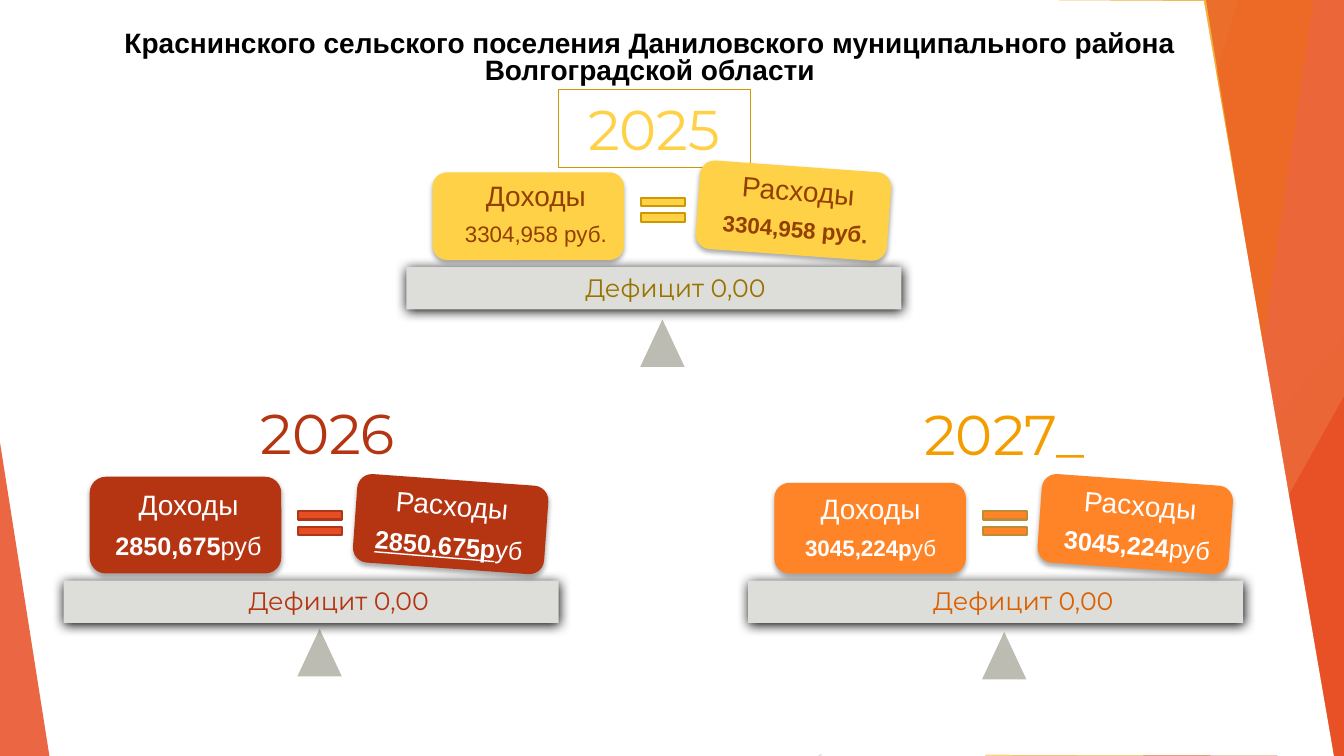
"""Builds the slide that balances budget income and expenses for 2025-2027."""
from lxml.etree import SubElement
from pptx import Presentation
from pptx.dml.color import RGBColor
from pptx.enum.shapes import MSO_CONNECTOR, MSO_SHAPE as SHAPE
from pptx.enum.text import MSO_AUTO_SIZE as AUTO_SIZE, PP_ALIGN as ALIGN
from pptx.oxml.ns import qn
from pptx.util import Inches, Pt

WHITE = RGBColor(0xFF, 0xFF, 0xFF)
BLACK = RGBColor(0x00, 0x00, 0x00)
RED = RGBColor(0xE8, 0x4C, 0x22)
SALMON = RGBColor(0xF1, 0x94, 0x7A)
AMBER = RGBColor(0xF4, 0x9D, 0x00)
APRICOT = RGBColor(0xFF, 0xBD, 0x47)
ORANGE = RGBColor(0xFF, 0x84, 0x27)
DARK_ORANGE = RGBColor(0xDC, 0x5F, 0x00)
TAN = RGBColor(0xBD, 0x8C, 0x35)
BRICK = RGBColor(0xB5, 0x35, 0x13)
RUST = RGBColor(0xAC, 0x38, 0x19)
YELLOW = RGBColor(0xFF, 0xD1, 0x47)
GOLD = RGBColor(0xCC, 0x99, 0x00)
OLIVE = RGBColor(0x99, 0x73, 0x00)
BROWN = RGBColor(0x93, 0x3F, 0x00)
BEAM_GREY = RGBColor(0xDD, 0xDD, 0xD9)
PIVOT_GREY = RGBColor(0xBC, 0xBC, 0xB2)
LINE_GREY = RGBColor(0xBF, 0xBF, 0xBF)
PALE_GREY = RGBColor(0xD9, 0xD9, 0xD9)

BEAM_SHADOW = (100, 8.5, 1)
CARD_SHADOW = (32, 3.5, 2.2)


def paint(shape, fill, alpha=100, line=None, line_width=1.5, shadow=None):
    """Set fill, outline and downward shadow (opacity, blur, distance)."""
    shape.shadow.inherit = False
    shape.fill.solid()
    shape.fill.fore_color.rgb = fill
    if alpha < 100:
        color = shape.fill._xPr.find(qn("a:solidFill"))[0]
        SubElement(color, qn("a:alpha"), val=str(alpha * 1000))
    if line is None:
        shape.line.fill.background()
    else:
        shape.line.color.rgb = line
        shape.line.width = Pt(line_width)
    if shadow:
        opacity, blur, distance = shadow
        effects = shape._element.spPr.find(qn("a:effectLst"))
        outer = SubElement(effects, qn("a:outerShdw"), blurRad=str(Pt(blur)),
                           dist=str(Pt(distance)), dir="5400000", algn="t", rotWithShape="0")
        black = SubElement(outer, qn("a:srgbClr"), val="000000")
        SubElement(black, qn("a:alpha"), val=str(opacity * 1000))


def write(place, lines, color, font="Arial", space_after=0):
    """Add a centred text box; each line is a list of (text, size, bold, underline)."""
    box = slide.shapes.add_textbox(*map(Inches, place))
    frame = box.text_frame
    frame.word_wrap = True
    frame.auto_size = AUTO_SIZE.SHAPE_TO_FIT_TEXT
    for number, runs in enumerate(lines):
        paragraph = frame.add_paragraph() if number else frame.paragraphs[0]
        paragraph.alignment = ALIGN.CENTER
        paragraph.space_after = Pt(space_after)
        for text, size, bold, underline in runs:
            run = paragraph.add_run()
            run.text = text
            run.font.name = font
            run.font.size = Pt(size)
            run.font.bold = bold
            run.font.underline = underline
            run.font.color.rgb = color
    return box


prs = Presentation()
prs.slide_width, prs.slide_height = Inches(13.33), Inches(7.5)
slide = prs.slides.add_slide(prs.slide_layouts[6])
shapes = slide.shapes

for ends, color in [((10.25, 0, 11.58, 7.5), LINE_GREY), ((13.33, 4.03, 8.12, 7.5), PALE_GREY)]:
    ray = shapes.add_connector(MSO_CONNECTOR.STRAIGHT, *map(Inches, ends))
    ray.line.color.rgb = color
    ray.line.width = Pt(0.75)
    SubElement(ray._element.spPr, qn("a:effectLst"))

TOP, BOTTOM, RIGHT = -0.01, 7.5, 13.33
facets = [
    ("band", (12.28, 10.04), RED, 30),
    ("band", (10.5, 11.83), RED, 20),
    ("corner", (9.77, 3.33, 3.56, 4.17, 1), APRICOT, 72),
    ("band", (10.21, 12.91), AMBER, 70),
    ("band", (13.03, 11.92), SALMON, 70),
    ("band", (11.96, 13.18), RED, 65),
    ("corner", (11.34, 3.93, 1.99, 3.57, 1), RED, 80),
    ("corner", (0, 4.39, 0.49, 3.11, 0), RED, 85),
    ("outline", [(11.94, 0.01), (13.23, 7.5), (7.86, 7.48), (10.43, 5.6), (10.7, 4.09), (9.91, 0)],
     WHITE, 100),
]
for kind, geometry, color, alpha in facets:
    if kind == "corner":
        *place, apex = geometry
        facet = shapes.add_shape(SHAPE.ISOSCELES_TRIANGLE, *map(Inches, place))
        facet.adjustments[0] = apex
    else:
        points = geometry
        if kind == "band":
            upper, lower = geometry
            points = [(upper, TOP), (RIGHT, TOP), (RIGHT, BOTTOM), (lower, BOTTOM)]
        start, *rest = [(Inches(x), Inches(y)) for x, y in points]
        builder = shapes.build_freeform(*start)
        builder.add_line_segments(rest, close=True)
        facet = builder.convert_to_shape()
    paint(facet, color, alpha)

balances = [
    dict(beam=(7.42, 5.76), year="2027_", year_at=(9.01, 3.91), year_color=AMBER,
         pivot_gap=0.51, deficit_shift=0.96, deficit_color=DARK_ORANGE,
         card=ORANGE, card_height=0.9, card_text=WHITE, equal=ORANGE, equal_line=TAN,
         income_at=(7.65, 4.83, 1.97, 0.79),
         income=[("3045,224р", 16, True, False), ("уб", 16, False, False)],
         expense_at=(10.29, 4.79, 2.01, 0.82),
         expense=[("3045,224", 18, True, False), ("руб", 18, False, False)]),
    dict(beam=(0.63, 5.76), year="2026", year_at=(2.3, 3.9), year_color=BRICK,
         pivot_gap=0.48, deficit_shift=0.96, deficit_color=BRICK,
         card=BRICK, card_height=0.96, card_text=WHITE, equal=RED, equal_line=RUST,
         income_at=(0.84, 4.79, 2.06, 0.82),
         income=[("2850,675", 18, True, False), ("руб", 18, False, False)],
         expense_at=(3.42, 4.79, 2.1, 0.82),
         expense=[("2850,675р", 18, True, True), ("уб", 18, False, False)]),
    dict(beam=(4.03, 2.65), year="2025", year_at=(5.54, 0.89), year_color=YELLOW,
         pivot_gap=0.52, deficit_shift=0.9, deficit_color=OLIVE,
         card=YELLOW, card_height=0.87, card_text=BROWN, equal=YELLOW, equal_line=GOLD,
         income_at=(4.31, 1.72, 2.01, 0.79), income=[("3304,958 руб.", 16, False, False)],
         expense_at=(6.9, 1.67, 2.01, 0.79), expense=[("3304,958 руб.", 16, True, False)]),
]
for balance in balances:
    x, y = balance["beam"]
    card, height = balance["card"], balance["card_height"]

    year = write((*balance["year_at"], 1.9, 0.77), [[(balance["year"], 40, False, False)]],
                 balance["year_color"], "Montserrat")
    if balance["year"] == "2025":
        year.line.color.rgb = GOLD
        year.line.width = Pt(0.75)

    pivot = shapes.add_shape(SHAPE.ISOSCELES_TRIANGLE, Inches(x + 2.32),
                             Inches(y + balance["pivot_gap"]), Inches(0.44), Inches(0.47))
    paint(pivot, PIVOT_GREY)
    beam = shapes.add_shape(SHAPE.RECTANGLE, Inches(x), Inches(y), Inches(4.91), Inches(0.42))
    paint(beam, BEAM_GREY, shadow=BEAM_SHADOW)
    write((x + balance["deficit_shift"], y, 3.54, 0.4), [[("Дефицит 0,00", 18, False, False)]],
          balance["deficit_color"], "Montserrat")

    for left, top, card_height, tilt in [(x + 0.26, y - 0.07 - height, height, 0),
                                         (x + 2.89, y - 1, 0.88, 4.1)]:
        plate = shapes.add_shape(SHAPE.FLOWCHART_ALTERNATE_PROCESS, Inches(left), Inches(top),
                                 Inches(1.9), Inches(card_height))
        plate.rotation = tilt
        paint(plate, card, shadow=CARD_SHADOW)
    for part, label, tilt in [("income", "Доходы", 0), ("expense", "Расходы", 4.7)]:
        amount = write(balance[part + "_at"], [[(label, 20, False, False)], balance[part]],
                       balance["card_text"], space_after=6)
        amount.rotation = tilt

    equal = shapes.add_shape(SHAPE.MATH_EQUAL, Inches(x + 2.25), Inches(y - 0.75),
                             Inches(0.59), Inches(0.36))
    equal.adjustments[0], equal.adjustments[1] = 0.235, 0.195
    paint(equal, balance["equal"], line=balance["equal_line"])

title = write((0.34, 0.27, 11.71, 0.64),
              [[("Краснинского сельского поселения Даниловского муниципального района "
                 "Волгоградской области", 20, True, False)]], BLACK)
heading = title.text_frame.paragraphs[0]
heading.line_spacing = 0.8
heading._p.get_or_add_pPr().set("marL", str(Inches(0.5)))

prs.save("out.pptx")
